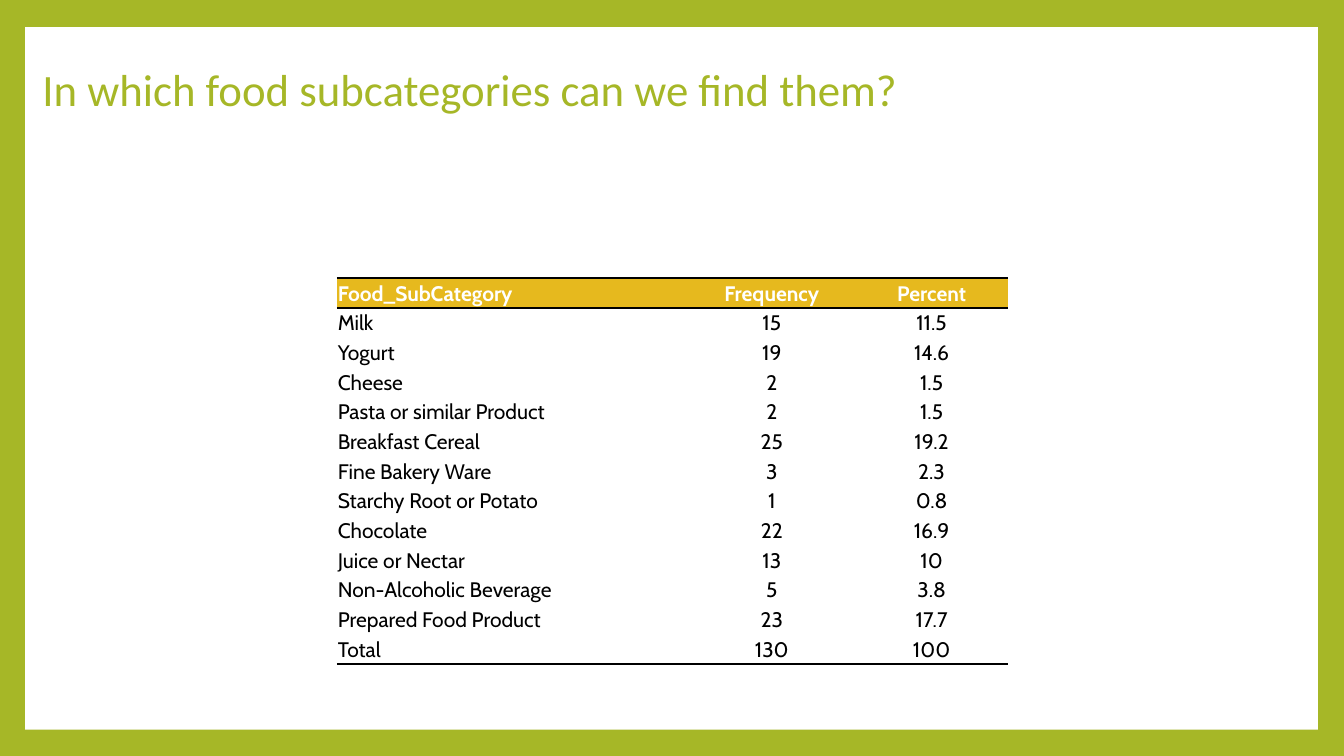
from lxml.etree import SubElement
from pptx import Presentation
from pptx.dml.color import RGBColor
from pptx.enum.shapes import MSO_SHAPE
from pptx.enum.text import MSO_ANCHOR, PP_ALIGN
from pptx.oxml.ns import qn
from pptx.util import Inches, Pt

GREEN = RGBColor(0xA6, 0xB7, 0x27)
GOLD = RGBColor(0xE6, 0xB9, 0x1E)
WHITE = RGBColor(0xFF, 0xFF, 0xFF)
BLACK = RGBColor(0x00, 0x00, 0x00)

COLUMN_WIDTHS = (3.49, 1.65, 1.52)
TABLE_HEIGHT = 3.83
SUBCATEGORIES = [
    ("Food_SubCategory", "Frequency", "Percent"),
    ("Milk", "15", "11.5"),
    ("Yogurt", "19", "14.6"),
    ("Cheese", "2", "1.5"),
    ("Pasta or similar Product", "2", "1.5"),
    ("Breakfast Cereal", "25", "19.2"),
    ("Fine Bakery Ware", "3", "2.3"),
    ("Starchy Root or Potato", "1", "0.8"),
    ("Chocolate", "22", "16.9"),
    ("Juice or Nectar", "13", "10"),
    ("Non-Alcoholic Beverage", "5", "3.8"),
    ("Prepared Food Product", "23", "17.7"),
    ("Total", "130", "100"),
]


class SlideBuilder:
    """Holds the text styles and the slide being built."""

    title_style = {"name": "Calibri", "size": Pt(32), "bold": False}
    table_style = {"name": "Cabin", "size": Pt(15)}
    cell_format = {
        "vertical_anchor": MSO_ANCHOR.MIDDLE,
        "margin_left": Inches(0.01),
        "margin_right": Inches(0.01),
        "margin_top": Inches(0.01),
        "margin_bottom": 0,
    }

    def __init__(self, slide):
        self.slide = slide

    def apply(self, target, values):
        for name, value in values.items():
            setattr(target, name, value)

    def add_background(self, color):
        fill = self.slide.background.fill
        fill.solid()
        fill.fore_color.rgb = color

    def add_panel(self, left, top, width, height, color):
        panel = self.slide.shapes.add_shape(
            MSO_SHAPE.RECTANGLE,
            Inches(left), Inches(top), Inches(width), Inches(height))
        panel.shadow.inherit = False
        panel.fill.solid()
        panel.fill.fore_color.rgb = color
        panel.line.fill.background()
        # Send the panel behind the title
        self.slide.shapes.element.insert(2, panel.element)

    def add_title(self, text, left, top, width, height):
        title = self.slide.shapes.title
        self.apply(title, {"left": Inches(left), "top": Inches(top),
                           "width": Inches(width), "height": Inches(height)})
        frame = title.text_frame
        frame.text = text
        self.apply(frame, {"word_wrap": True, "vertical_anchor": MSO_ANCHOR.MIDDLE})
        paragraph = frame.paragraphs[0]
        self.apply(paragraph, {"alignment": PP_ALIGN.LEFT, "line_spacing": 0.9})
        font = paragraph.runs[0].font
        self.apply(font, self.title_style)
        font.color.rgb = GREEN

    def set_borders(self, cell, ruled_sides):
        properties = cell._tc.get_or_add_tcPr()
        for side in "LRTB":
            if side in ruled_sides:
                line = SubElement(properties, qn(f"a:ln{side}"), w=str(Pt(2)))
                fill = SubElement(line, qn("a:solidFill"))
                SubElement(fill, qn("a:srgbClr"), val=str(BLACK))
            else:
                line = SubElement(properties, qn(f"a:ln{side}"), w="0")
                SubElement(line, qn("a:noFill"))

    def fill_cell(self, cell, text, alignment, is_header, ruled_sides):
        self.set_borders(cell, ruled_sides)
        cell.fill.solid()
        cell.fill.fore_color.rgb = GOLD if is_header else WHITE
        self.apply(cell, self.cell_format)
        cell.text = text
        paragraph = cell.text_frame.paragraphs[0]
        paragraph.alignment = alignment
        font = paragraph.runs[0].font
        self.apply(font, {**self.table_style, "bold": is_header})
        font.color.rgb = WHITE if is_header else BLACK

    def add_table(self, rows, left, top, column_widths, height):
        table = self.slide.shapes.add_table(
            len(rows), len(column_widths), Inches(left), Inches(top),
            Inches(sum(column_widths)), Inches(height)).table
        self.apply(table, {"first_row": False, "horz_banding": False})
        for column, width in zip(table.columns, column_widths):
            column.width = Inches(width)
        # Rules run above and below the header and under the last row
        ruled_rows = {0: "TB", 1: "T", len(rows) - 1: "B"}
        for row_index, values in enumerate(rows):
            table.rows[row_index].height = Inches(height / len(rows))
            for column_index, text in enumerate(values):
                alignment = PP_ALIGN.CENTER if column_index else PP_ALIGN.LEFT
                self.fill_cell(table.cell(row_index, column_index), text, alignment,
                               row_index == 0, ruled_rows.get(row_index, ""))


def main():
    presentation = Presentation()
    presentation.slide_width = Inches(13.33)
    presentation.slide_height = Inches(7.5)
    title_only = presentation.slide_layouts[5]
    builder = SlideBuilder(presentation.slides.add_slide(title_only))

    # Green frame around a white panel
    builder.add_background(GREEN)
    builder.add_panel(0.25, 0.27, 12.82, 6.97, WHITE)

    # Title and frequency table
    builder.add_title("In which food subcategories can we find them?",
                      0.32, 0.17, 10.8, 1.48)
    builder.add_table(SUBCATEGORIES, 3.34, 2.76, COLUMN_WIDTHS, TABLE_HEIGHT)

    presentation.save("out.pptx")


if __name__ == "__main__":
    main()
